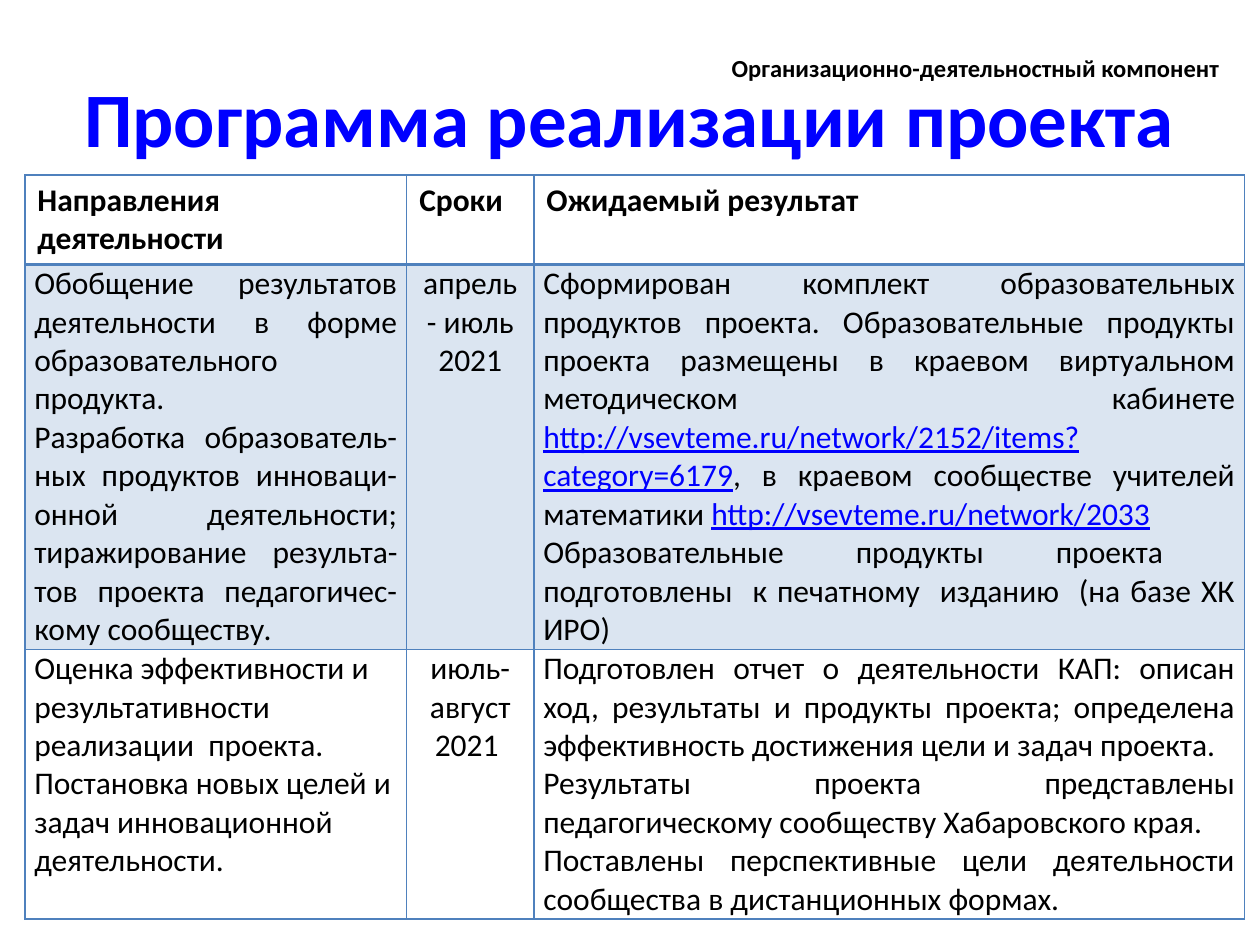
import pptx
import pptx.util
import pptx.dml.color
import pptx.enum.text
import pptx.oxml
import pptx.oxml.ns

Pt = pptx.util.Pt
RGB = pptx.dml.color.RGBColor
ALIGN = pptx.enum.text.PP_ALIGN
ANCHOR = pptx.enum.text.MSO_ANCHOR

BLUE = RGB(0x00, 0x00, 0xFF)
BLACK = RGB(0x00, 0x00, 0x00)
STEEL = RGB(0x4F, 0x81, 0xBD)
FONT = "Calibri"

COLS = (218.2, 72.7, 406.1)
ROWS = (51, 220, 154)
HEADS = ("Направления деятельности", "Сроки", "Ожидаемый результат")

# Each cell is (alignment, paragraphs); a paragraph is a list of runs.
# Runs that start with "http" are shown as web addresses.
BODY = (
    (
        (ALIGN.JUSTIFY, (
            ["Обобщение результатов деятельности в форме образовательного продукта."],
            ["Разработка образователь-ных продуктов инноваци-онной деятельности; "
             "тиражирование результа-тов проекта педагогичес-кому сообществу."],
        )),
        (ALIGN.CENTER, (["апрель - июль 2021"],)),
        (ALIGN.JUSTIFY, (
            ["Сформирован комплект образовательных продуктов проекта. "
             "Образовательные продукты проекта размещены в краевом виртуальном "
             "методическом кабинете ",
             "http://vsevteme.ru/network/2152/items?category=6179",
             ", в краевом сообществе учителей математики ",
             "http://vsevteme.ru/network/2033"],
            ["Образовательные продукты проекта  подготовлены  к печатному  "
             "издание".replace("издание", "изданию") + "  (на базе ХК ИРО)"],
        )),
    ),
    (
        (ALIGN.LEFT, (
            ["Оценка эффективности и результативности реализации  проекта.  "
             "Постановка новых целей и задач инновационной деятельности."],
        )),
        (ALIGN.CENTER, (["июль-август 2021 "],)),
        (ALIGN.JUSTIFY, (
            ["Подготовлен отчет о деятельности КАП: описан ход, результаты и "
             "продукты проекта; определена эффективность достижения цели и "
             "задач проекта."],
            ["Результаты проекта представлены педагогическому сообществу "
             "Хабаровского края."],
            ["Поставлены перспективные цели деятельности сообщества в "
             "дистанционных формах."],
        )),
    ),
)


def style(font, size, color=BLACK, bold=False):
    font.name = FONT
    font.size = Pt(size)
    font.bold = bold
    font.color.rgb = color


def add_title(slide, left, top, width, height):
    title = slide.shapes.title
    title.left, title.top = Pt(left), Pt(top)
    title.width, title.height = Pt(width), Pt(height)
    frame = title.text_frame
    frame.text = "Программа реализации проекта"
    frame.vertical_anchor = ANCHOR.MIDDLE
    para = frame.paragraphs[0]
    para.alignment = ALIGN.CENTER
    style(para.runs[0].font, 44, BLUE, True)


def add_label(slide, left, top, width, height):
    box = slide.shapes.add_textbox(Pt(left), Pt(top), Pt(width), Pt(height))
    frame = box.text_frame
    frame.word_wrap = True
    frame.text = "Организационно-деятельностный компонент"
    style(frame.paragraphs[0].runs[0].font, 14, BLACK, True)


def set_lines(cell, base):
    """Draw the four cell borders; base is the width of the bottom one."""
    props = cell._tc.get_or_add_tcPr()
    sides = (("lnL", 1), ("lnR", 1), ("lnT", 1), ("lnB", base))
    for spot, (tag, width) in enumerate(sides):
        props.insert(spot, pptx.oxml.parse_xml(
            f'<a:{tag} {pptx.oxml.ns.nsdecls("a")} w="{Pt(width)}">'
            f'<a:solidFill><a:srgbClr val="{STEEL}"/></a:solidFill></a:{tag}>'))


def set_tint(cell):
    """Fill the cell with the border colour at 20 % opacity."""
    cell.fill.solid()
    cell.fill.fore_color.rgb = STEEL
    color = cell._tc.tcPr.find(".//" + pptx.oxml.ns.qn("a:srgbClr"))
    color.append(pptx.oxml.parse_xml(
        f'<a:alpha {pptx.oxml.ns.nsdecls("a")} val="20000"/>'))


def fill_cell(cell, align, paras):
    cell.margin_left = cell.margin_right = Pt(5.4)
    cell.margin_top = cell.margin_bottom = 0
    frame = cell.text_frame
    for num, parts in enumerate(paras):
        para = frame.add_paragraph() if num else frame.paragraphs[0]
        para.alignment = align
        for part in parts:
            run = para.add_run()
            run.text = part
            link = part.startswith("http")
            style(run.font, 18, BLUE if link else BLACK)
            run.font.underline = link


def add_plan(slide, left, top, width, height):
    shape = slide.shapes.add_table(
        len(ROWS), len(COLS), Pt(left), Pt(top), Pt(width), Pt(height))
    table = shape.table
    table.first_row = table.horz_banding = False
    for col, size in zip(table.columns, COLS):
        col.width = Pt(size)
    for row, size in zip(table.rows, ROWS):
        row.height = Pt(size)

    # Header row
    for num, head in enumerate(HEADS):
        cell = table.cell(0, num)
        cell.text_frame.text = head
        style(cell.text_frame.paragraphs[0].runs[0].font, 18, BLACK, True)
        cell.fill.background()
        set_lines(cell, 2)

    # Body rows, the first one tinted
    for row, line in enumerate(BODY, 1):
        for num, (align, paras) in enumerate(line):
            cell = table.cell(row, num)
            fill_cell(cell, align, paras)
            if row == 1:
                set_tint(cell)
            else:
                cell.fill.background()
            set_lines(cell, 1)


def main():
    deck = pptx.Presentation()
    deck.slide_width, deck.slide_height = Pt(720), Pt(540)
    slide = deck.slides.add_slide(deck.slide_layouts[5])
    add_title(slide, 36, 21.6, 648, 90)
    add_plan(slide, 14.2, 100, sum(COLS), sum(ROWS))
    add_label(slide, 411, 26.6, 303, 24.5)
    deck.save("out.pptx")


if __name__ == "__main__":
    main()
